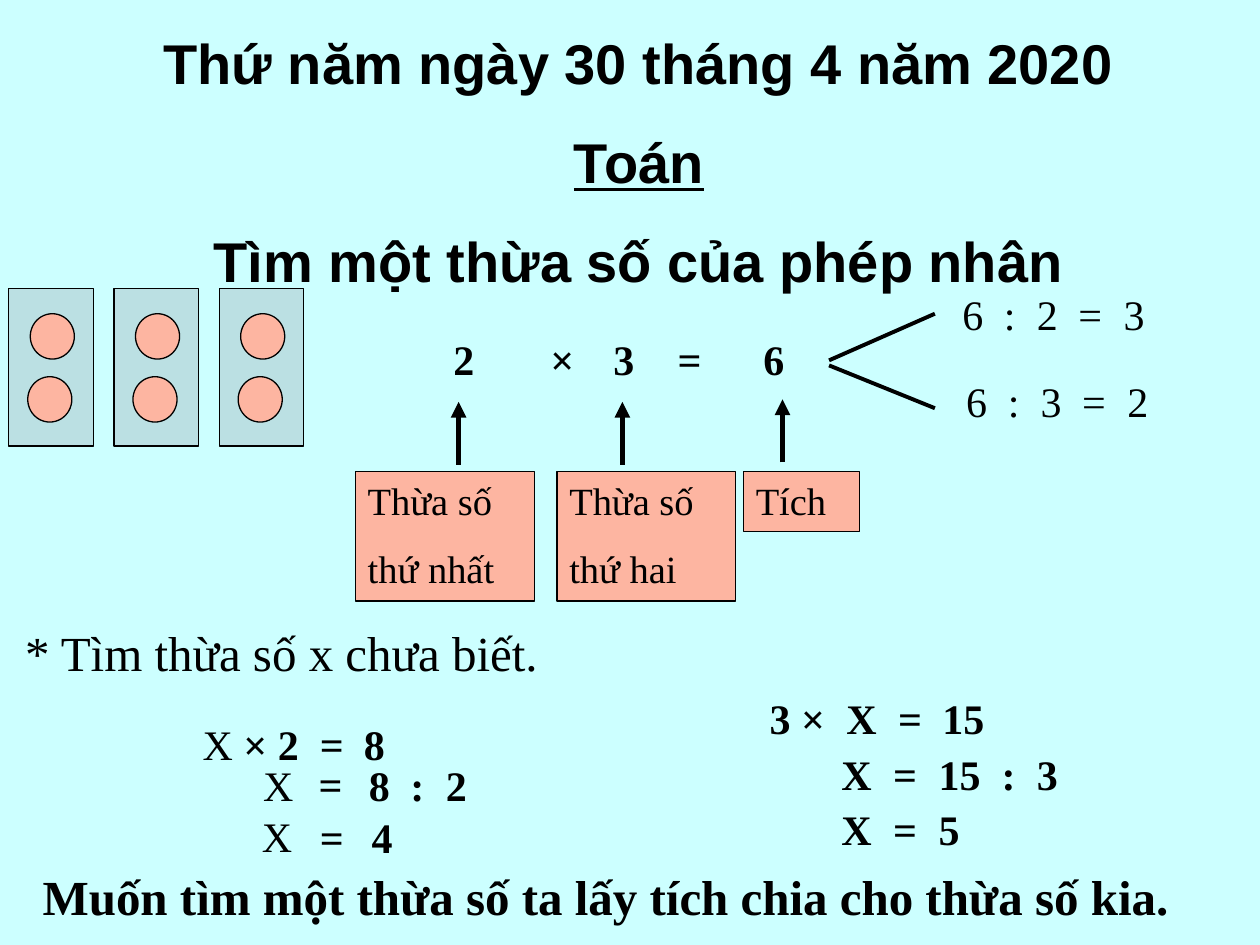
from lxml import etree
from pptx import Presentation
from pptx.dml.color import RGBColor
from pptx.enum.shapes import MSO_CONNECTOR, MSO_SHAPE
from pptx.enum.text import MSO_ANCHOR, MSO_AUTO_SIZE, PP_ALIGN
from pptx.oxml.ns import qn
from pptx.util import Inches, Pt

RECTANGLE, OVAL = MSO_SHAPE.RECTANGLE, MSO_SHAPE.OVAL
STRAIGHT = MSO_CONNECTOR.STRAIGHT
TOP, CENTER, LEFT = MSO_ANCHOR.TOP, PP_ALIGN.CENTER, PP_ALIGN.LEFT
NO_AUTOFIT = MSO_AUTO_SIZE.NONE
COLORS = {"background": "CCFFFF", "card": "BBE0E3", "salmon": "FDB5A1", "black": "000000"}
COLORS = {name: RGBColor.from_string(value) for name, value in COLORS.items()}
SERIF, SANS = "Times New Roman", "Arial"


def write_lines(shape, lines, size, bold=False, font=SERIF, alignment=LEFT, tabs=()):
    frame = shape.text_frame
    frame.word_wrap = True
    frame.auto_size = NO_AUTOFIT
    frame.vertical_anchor = TOP
    for index, line in enumerate(lines):
        paragraph = frame.add_paragraph() if index else frame.paragraphs[0]
        paragraph.text = line
        paragraph.alignment = alignment
        paragraph.space_before = Pt(round(size * 0.55) if index else 0)
        if tabs:
            tab_list = etree.SubElement(paragraph._p.get_or_add_pPr(), qn("a:tabLst"))
            for position in tabs:
                etree.SubElement(tab_list, qn("a:tab"), pos=str(Inches(position)), algn="l")
        paragraph.font.name = font
        paragraph.font.size = Pt(size)
        paragraph.font.bold = bold
        paragraph.font.color.rgb = COLORS["black"]


def add_filled(shapes, kind, left, top, width, height, color):
    shape = shapes.add_shape(kind, Inches(left), Inches(top), Inches(width), Inches(height))
    shape.shadow.inherit = False
    shape.fill.solid()
    shape.fill.fore_color.rgb = COLORS[color]
    shape.line.color.rgb = COLORS["black"]
    shape.line.width = Pt(0.75)
    return shape


presentation = Presentation()
presentation.slide_width, presentation.slide_height = Inches(10), Inches(7.5)
slide = presentation.slides.add_slide(presentation.slide_layouts[5])
slide.background.fill.solid()
slide.background.fill.fore_color.rgb = COLORS["background"]

title = slide.shapes.title
title.left, title.top, title.width, title.height = Inches(0.14), Inches(0.18), Inches(9.86), Inches(2.26)
heading = ["Thứ năm ngày 30 tháng 4 năm 2020", "Toán", "Tìm một thừa số của phép nhân"]
write_lines(title, heading, 32, True, SANS, CENTER)
title.text_frame.paragraphs[1].font.underline = True

for column in range(3):
    left = 0.07 + column * 0.835
    card = slide.shapes.add_group_shape()
    add_filled(card.shapes, RECTANGLE, left, 2.29, 0.67, 1.25, "card")
    for offset, top in [(0.15, 2.99), (0.17, 2.49)]:
        add_filled(card.shapes, OVAL, left + offset, top, 0.35, 0.36, "salmon")

labels = [
    (2.82, 1.42, 1.03, ["Thừa số", "thứ nhất"]),
    (4.42, 1.42, 1.03, ["Thừa số", "thứ hai"]),
    (5.9, 0.92, 0.48, ["Tích"]),
]
for left, width, height, lines in labels:
    write_lines(add_filled(slide.shapes, RECTANGLE, left, 3.74, width, height, "salmon"), lines, 22)

lines = [
    (6.58, 2.86, 7.42, 2.49, 2.25, False),
    (6.58, 2.9, 7.42, 3.24, 2.25, False),
    (3.64, 3.69, 3.64, 3.19, 3, True),
    (4.94, 3.69, 4.94, 3.19, 3, True),
    (6.21, 3.67, 6.21, 3.17, 3, True),
]
for start_x, start_y, end_x, end_y, weight, has_arrow in lines:
    connector = slide.shapes.add_connector(
        STRAIGHT, Inches(start_x), Inches(start_y), Inches(end_x), Inches(end_y))
    connector.line.color.rgb = COLORS["black"]
    connector.line.width = Pt(weight)
    if has_arrow:
        etree.SubElement(connector.line._get_or_add_ln(), qn("a:tailEnd"), type="triangle")
    etree.SubElement(connector._element.spPr, qn("a:effectLst"))

division_tabs = (0.33, 0.59, 0.92, 1.28)
texts = [
    (3.5, 2.6, 3.34, "2\t×\t3\t=\t6", 24, True, (0.77, 1.27, 1.78, 2.46)),
    (7.54, 2.24, 1.83, "6\t:\t2\t=\t3", 24, False, division_tabs),
    (7.57, 2.93, 1.83, "6\t:\t3\t=\t2", 24, False, division_tabs),
    (0.1, 4.89, 5.08, "* Tìm thừa số x chưa biết.", 28, False, ()),
    (1.99, 5.98, 0.5, "X", 24, False, ()),
    (2.43, 5.97, 0.42, "=", 24, True, ()),
    (2.83, 5.98, 1.17, "8\t:\t2", 24, True, (0.33, 0.61)),
    (1.98, 6.38, 0.5, "X", 24, False, ()),
    (2.44, 6.39, 0.58, "=", 24, True, ()),
    (2.85, 6.39, 0.58, "4", 24, True, ()),
    (6.01, 5.45, 2.38, "3 ×\tX\t=\t15", 24, True, (0.61, 1.02, 1.37)),
    (6.58, 5.89, 2.25, "X\t=\t15\t:\t3", 24, True, (0.41, 0.77, 1.27, 1.55)),
    (6.58, 6.33, 2.08, "X\t=\t5", 24, True, (0.41, 0.77)),
    (0.24, 6.83, 9.4, "Muốn tìm một thừa số ta lấy tích chia cho thừa số kia.", 28, True, ()),
    (1.51, 5.65, 2.02, "X", 24, True, (0.93, 1.28)),
]
for left, top, width, text, size, bold, tabs in texts:
    height = 0.57 if size == 28 else 0.5
    box = slide.shapes.add_textbox(Inches(left), Inches(top), Inches(width), Inches(height))
    write_lines(box, [text], size, bold, tabs=tabs)

first_equation = box.text_frame.paragraphs[0]
first_equation.runs[0].font.bold = False
first_equation.add_run().text = " × 2\t=\t8"

presentation.save("out.pptx")
